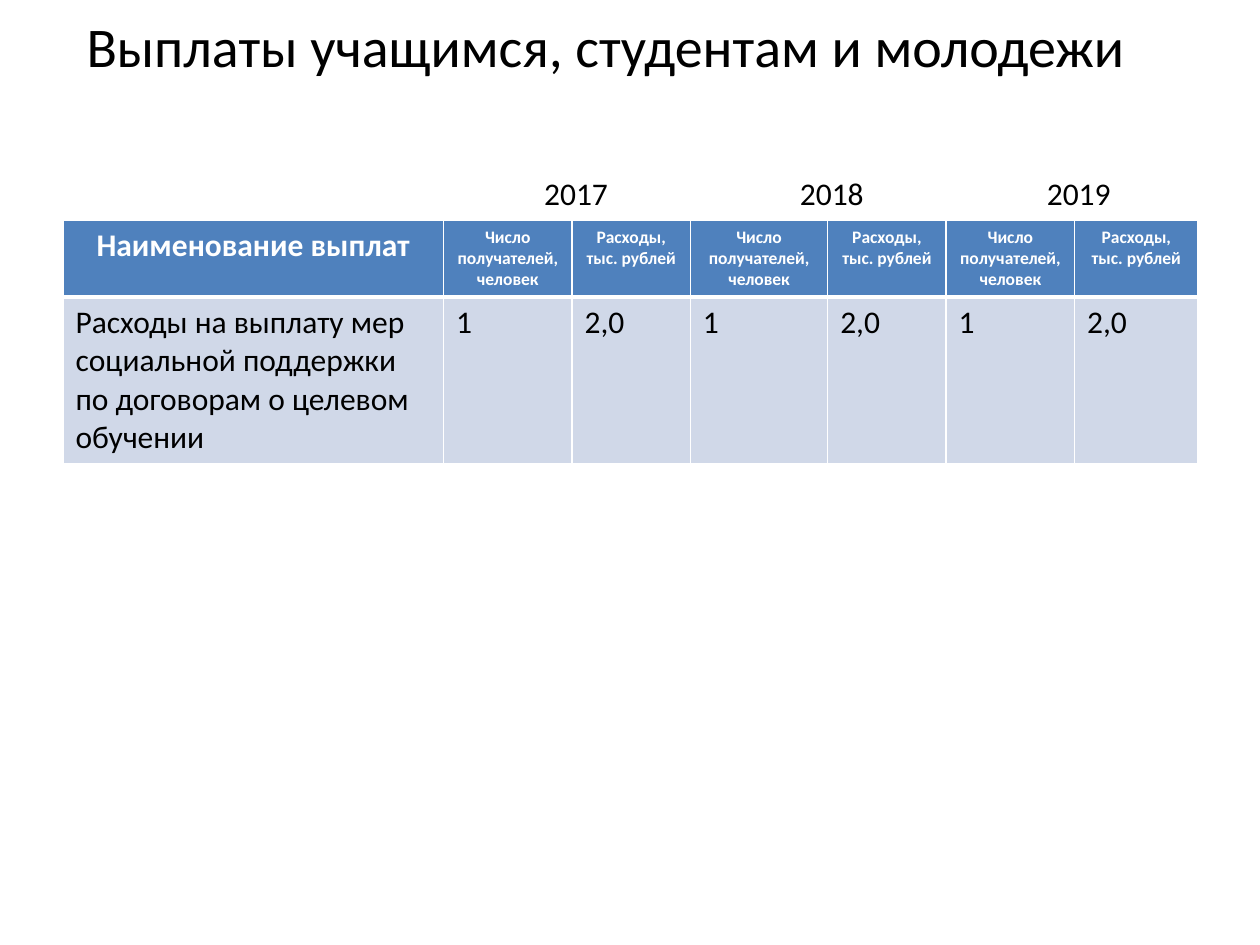
from itertools import accumulate

from lxml.etree import SubElement
from pptx import Presentation
from pptx.dml.color import RGBColor
from pptx.enum.text import MSO_ANCHOR, PP_ALIGN
from pptx.oxml.ns import qn
from pptx.util import Inches, Pt

THEME = {
    "font": "Calibri",
    "text": "000000", "header_text": "FFFFFF", "rule": "FFFFFF",
    "header_fill": "4F81BD", "body_fill": "D0D8E8",
    "title_size": 32, "body_size": 18, "label_size": 10,
    "thin_rule": 1, "thick_rule": 3,
}


def format_text(frame, size, color, bold=False, align=PP_ALIGN.LEFT):
    for paragraph in frame.paragraphs:
        paragraph.alignment = align
        for run in paragraph.runs:
            run.font.name = THEME["font"]
            run.font.size = Pt(size)
            run.font.bold = bold
            run.font.color.rgb = RGBColor.from_string(color)


def rule_cell(cell, top, bottom):
    properties = cell._tc.get_or_add_tcPr()
    thin = THEME["thin_rule"]
    for side, width in (("L", thin), ("R", thin), ("T", top), ("B", bottom)):
        line = SubElement(properties, qn(f"a:ln{side}"), w=str(Pt(width)))
        SubElement(SubElement(line, qn("a:solidFill")), qn("a:srgbClr"), val=THEME["rule"])


presentation = Presentation()
presentation.slide_width, presentation.slide_height = Inches(10), Inches(7.5)
slide = presentation.slides.add_slide(presentation.slide_layouts[5])

# Title
title = slide.shapes.title
title.left, title.top = Inches(0.31), Inches(0)
title.width, title.height = Inches(9), Inches(0.72)
title.text_frame.text = "Выплаты учащимся, студентам и молодежи"
title.text_frame.vertical_anchor = MSO_ANCHOR.MIDDLE
format_text(title.text_frame, THEME["title_size"], THEME["text"], align=PP_ALIGN.CENTER)

# Payments table: a name column, then a pair of columns for each year
years = ["2017", "2018", "2019"]
column_widths = [3.02, 1.02, 0.94, 1.09, 0.94, 1.02, 0.98]
table_left, table_top, row_height = 0.5, 1.75, 0.41
headers = ["Наименование выплат"] + ["Число получателей, человек", "Расходы,\nтыс. рублей"] * len(years)
payments = ["Расходы на выплату мер социальной поддержки по договорам о целевом обучении"]
payments += ["1", "2,0"] * len(years)

table = slide.shapes.add_table(
    2, len(headers), Inches(table_left), Inches(table_top),
    Inches(sum(column_widths)), Inches(2 * row_height)).table
for row in table.rows:
    row.height = Inches(row_height)

for index, width in enumerate(column_widths):
    table.columns[index].width = Inches(width)

    header = table.cell(0, index)
    header.text_frame.text = headers[index]
    header_size = THEME["label_size"] if index else THEME["body_size"]
    format_text(header.text_frame, header_size, THEME["header_text"], True, PP_ALIGN.CENTER)
    rule_cell(header, THEME["thin_rule"], THEME["thick_rule"])
    header.fill.solid()
    header.fill.fore_color.rgb = RGBColor.from_string(THEME["header_fill"])

    payment = table.cell(1, index)
    payment.text_frame.text = payments[index]
    format_text(payment.text_frame, THEME["body_size"], THEME["text"])
    rule_cell(payment, THEME["thick_rule"], THEME["thin_rule"])
    payment.fill.solid()
    payment.fill.fore_color.rgb = RGBColor.from_string(THEME["body_fill"])

# Years, each placed over the line between its two columns
column_edges = list(accumulate(column_widths, initial=table_left))
for year, pair_middle in zip(years, column_edges[2::2]):
    year_label = slide.shapes.add_textbox(
        Inches(pair_middle - 0.32), Inches(1.33), Inches(0.71), Inches(0.4))
    year_label.text_frame.word_wrap = False
    year_label.text_frame.text = year
    format_text(year_label.text_frame, THEME["body_size"], THEME["text"])

presentation.save("out.pptx")
